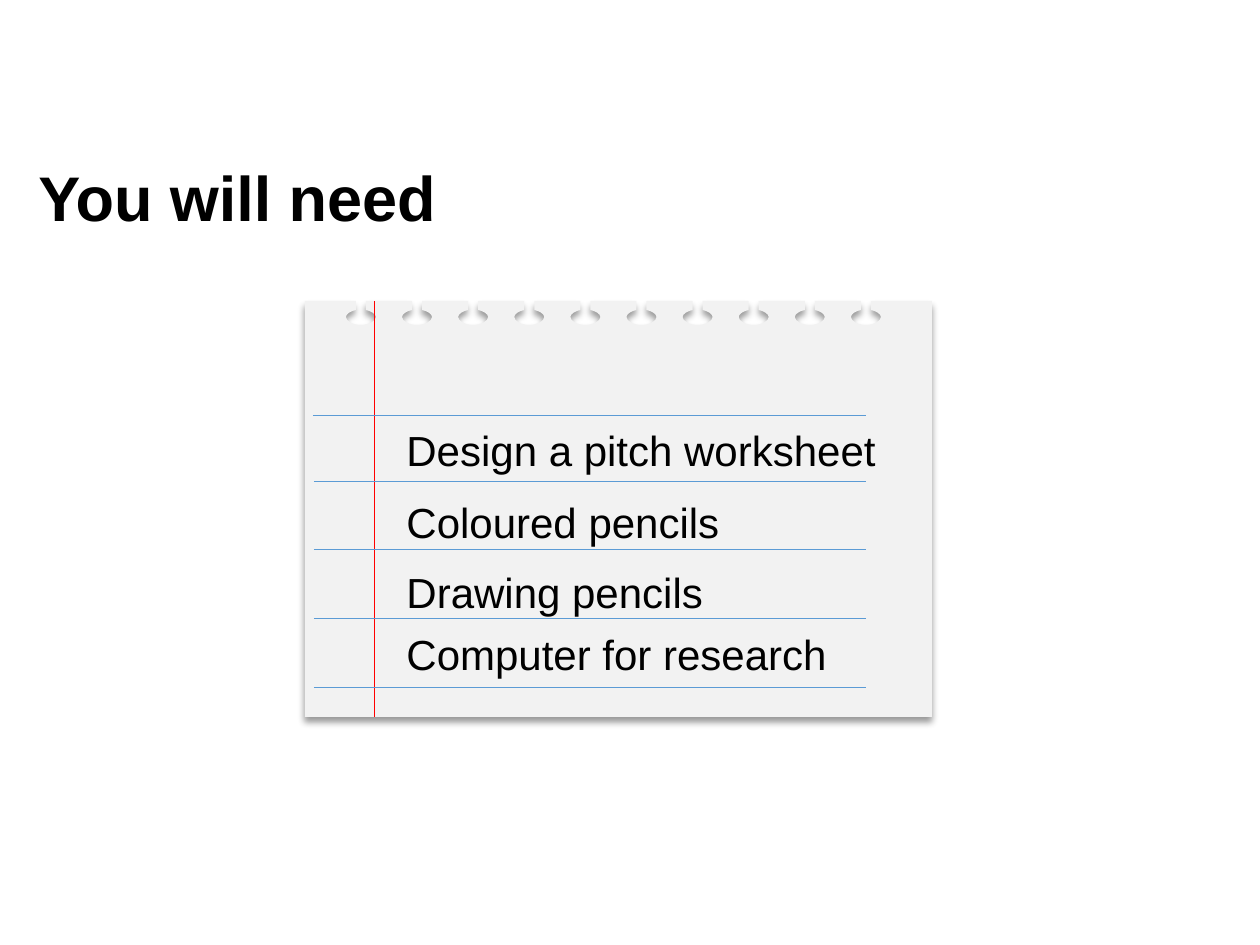
import pptx
import pptx.dml.color
import pptx.enum.shapes
import pptx.enum.text
import pptx.oxml
import pptx.oxml.ns
import pptx.util
from lxml import etree

RGBColor = pptx.dml.color.RGBColor
qn = pptx.oxml.ns.qn
BLACK = RGBColor(0x00, 0x00, 0x00)
PAPER = RGBColor(0xF2, 0xF2, 0xF2)
MARGIN_RED = RGBColor(0xFF, 0x00, 0x00)
RULE_BLUE = RGBColor(0x5B, 0x9B, 0xD5)

EMU_PER_PX = 914400 / 126

PAGE_LEFT, PAGE_TOP, PAGE_RIGHT, PAGE_BOTTOM = 305, 301, 932, 717
HOLES = 10
FIRST_HOLE, LAST_HOLE = 361, 866
# Left half of a hole, relative to its centre line and the page top:
# the slit is two straight points, the rest are curve points.
SLIT = [(-5, 0), (-5, 9)]
HALF_CURVE = [(-10, 10), (-15, 13), (-15, 16), (-15, 20), (-8, 24), (0, 24)]

RULES = ((313, 415), (314, 481), (314, 549), (314, 618), (314, 687))
ITEMS = (
    ("Design a pitch worksheet", 418, 504),
    ("Coloured pencils", 490, 533),
    ("Computer for research", 622, 449),
    ("Drawing pencils", 560, 533),
)


def px(n):
    return pptx.util.Emu(round(n * EMU_PER_PX))


def hole_points(cx):
    half = SLIT + HALF_CURVE
    mirrored = [(-x, y) for x, y in reversed(half[:-1])]
    return [(cx + x, PAGE_TOP + y) for x, y in half + mirrored]


def curve_holes(sp):
    """Turn the curve points of each hole into Bezier segments."""
    segments = list(sp._element.iter(qn("a:lnTo")))
    per_hole = 2 * (len(SLIT) + len(HALF_CURVE)) - 1
    for hole in range(HOLES):
        first = hole * per_hole + len(SLIT)
        for i in range(first, first + 2 * len(HALF_CURVE), 3):
            curve = etree.Element(qn("a:cubicBezTo"))
            segments[i].addprevious(curve)
            for segment in segments[i:i + 3]:
                curve.append(segment[0])
                segment.getparent().remove(segment)


def add_shadow(sp):
    sp.shadow.inherit = False
    effects = sp._element.spPr.find(qn("a:effectLst"))
    effects.append(pptx.oxml.parse_xml(
        f'<a:outerShdw {pptx.oxml.ns.nsdecls("a")} blurRad="50800" dist="38100" '
        'dir="5400000" algn="t" rotWithShape="0"><a:srgbClr val="000000">'
        '<a:alpha val="40000"/></a:srgbClr></a:outerShdw>'))


def add_page(slide):
    points = []
    for i in range(HOLES):
        points += hole_points(FIRST_HOLE + (LAST_HOLE - FIRST_HOLE) * i / (HOLES - 1))
    points += [(PAGE_RIGHT, PAGE_TOP), (PAGE_RIGHT, PAGE_BOTTOM), (PAGE_LEFT, PAGE_BOTTOM)]
    builder = slide.shapes.build_freeform(px(PAGE_LEFT), px(PAGE_TOP))
    builder.add_line_segments([(px(x), px(y)) for x, y in points], close=True)
    sp = builder.convert_to_shape()
    curve_holes(sp)
    sp.fill.solid()
    sp.fill.fore_color.rgb = PAPER
    sp.line.fill.background()
    add_shadow(sp)


def add_line(slide, x1, y1, x2, y2, color):
    line = slide.shapes.add_connector(
        pptx.enum.shapes.MSO_CONNECTOR.STRAIGHT, px(x1), px(y1), px(x2), px(y2))
    line.line.color.rgb = color
    line.line.width = pptx.util.Pt(0.5)
    etree.SubElement(line._element.spPr, qn("a:effectLst"))


def add_text(slide, text, x, y, w, h, size=24, bold=False, spacing=None,
             anchor=pptx.enum.text.MSO_ANCHOR.TOP,
             auto_size=pptx.enum.text.MSO_AUTO_SIZE.SHAPE_TO_FIT_TEXT):
    tf = slide.shapes.add_textbox(px(x), px(y), px(w), px(h)).text_frame
    tf.word_wrap = True
    tf.auto_size = auto_size
    tf.vertical_anchor = anchor
    p = tf.paragraphs[0]
    p.line_spacing = spacing
    r = p.add_run()
    r.text = text
    r.font.name = "Arial"
    r.font.size = pptx.util.Pt(size)
    r.font.bold = bold
    r.font.color.rgb = BLACK


def main():
    prs = pptx.Presentation()
    prs.slide_width, prs.slide_height = px(1260), px(945)
    slide = prs.slides.add_slide(prs.slide_layouts[6])

    add_page(slide)
    add_line(slide, 374, PAGE_TOP, 374, PAGE_BOTTOM, MARGIN_RED)
    for x, y in RULES:
        add_line(slide, x, y, 866, y, RULE_BLUE)
    for text, y, width in ITEMS:
        add_text(slide, text, 394, y, width, 63)
    add_text(slide, "You will need", 26, 151, 451, 100, size=36, bold=True, spacing=0.9,
             anchor=pptx.enum.text.MSO_ANCHOR.MIDDLE,
             auto_size=pptx.enum.text.MSO_AUTO_SIZE.NONE)

    prs.save("out.pptx")


if __name__ == "__main__":
    main()
